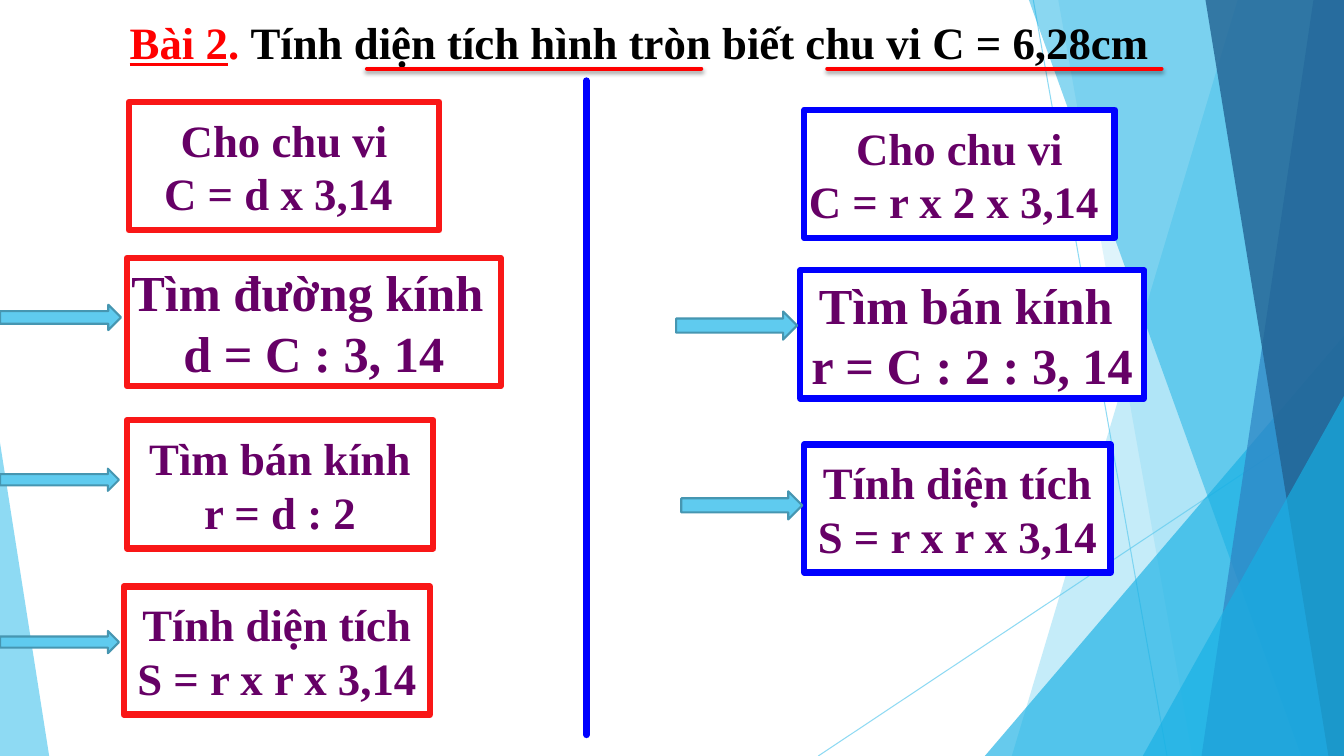
from lxml.etree import SubElement as Sub
from pptx import Presentation as Deck
from pptx.dml.color import RGBColor as Rgb
from pptx.enum.shapes import MSO_CONNECTOR as Join, MSO_SHAPE as Kind
from pptx.enum.text import MSO_ANCHOR as Anchor, PP_ALIGN as Align
from pptx.oxml.ns import qn
from pptx.util import Cm, Pt

HUES = {
    "red": "FF0000", "frame": "F91717", "blue": "0000FF", "plum": "660066",
    "black": "000000", "white": "FFFFFF", "sky": "5FCBEF", "edge": "4696B1",
    "cyan": "17B0E4", "steel": "2E83C3", "navy": "226292",
}
FONT = "Times New Roman"
WIDE, HIGH = 33.87, 19.05
BOX_H = 3.23


def hue(name):
    """Return the named colour."""
    return Rgb.from_string(HUES[name])


def fade(shape, alpha):
    """Make the colour of a shape or line partly clear."""
    clr = shape._element.spPr.find(".//" + qn("a:srgbClr"))
    Sub(clr, qn("a:alpha"), val=str(alpha * 1000))


def paint(shape, fill, edge=None, width=0):
    """Set fill and outline and drop the shadow."""
    shape.shadow.inherit = False
    shape.fill.solid()
    shape.fill.fore_color.rgb = hue(fill)
    if edge:
        shape.line.color.rgb = hue(edge)
        shape.line.width = Pt(width)
    else:
        shape.line.fill.background()


def write(para, text, size=32, color="plum", under=False):
    """Add a bold run of text to a paragraph."""
    run = para.add_run()
    run.text = text
    font = run.font
    font.name, font.size = FONT, Pt(size)
    font.bold, font.underline = True, under
    font.color.rgb = hue(color)


def rule(slide, start, end, color, width, alpha=None, shade=False):
    """Draw a straight line, faded or with a soft shadow if asked."""
    line = slide.shapes.add_connector(
        Join.STRAIGHT, *[Cm(n) for n in (*start, *end)])
    line.line.color.rgb = hue(color)
    line.line.width = Pt(width)
    if alpha:
        fade(line, alpha)
    else:
        line.line._get_or_add_ln().set("cap", "rnd")
    glow = Sub(line._element.spPr, qn("a:effectLst"))
    if shade:
        cast = Sub(glow, qn("a:outerShdw"), blurRad="38100", dist="25400",
                   dir="5400000", rotWithShape="0")
        clr = Sub(cast, qn("a:srgbClr"), val=HUES["black"])
        Sub(clr, qn("a:alpha"), val="35000")


def facet(slide, top, foot, right, color, alpha):
    """Draw a slanted band reaching to the right edge of the slide."""
    pen = slide.shapes.build_freeform(Cm(top), 0)
    spots = [(WIDE, 0), (WIDE, HIGH), (foot, HIGH)] if right else []
    pen.add_line_segments([(Cm(x), Cm(y)) for x, y in spots])
    shape = pen.convert_to_shape()
    paint(shape, color)
    fade(shape, alpha)


def peak(slide, left, top, width, tip, color, alpha):
    """Draw a triangle standing on the bottom of the slide."""
    shape = slide.shapes.add_shape(
        Kind.ISOSCELES_TRIANGLE, Cm(left), Cm(top), Cm(width), Cm(HIGH - top))
    shape.adjustments[0] = tip
    paint(shape, color)
    fade(shape, alpha)


def step(slide, left, top, width, edge, lines, size=32):
    """Draw a framed step of the solution."""
    box = slide.shapes.add_shape(
        Kind.RECTANGLE, Cm(left), Cm(top), Cm(width), Cm(BOX_H))
    paint(box, "white", edge, 4.5)
    frame = box.text_frame
    frame.word_wrap = False
    frame.vertical_anchor = Anchor.MIDDLE
    for i, text in enumerate(lines):
        para = frame.add_paragraph() if i else frame.paragraphs[0]
        para.alignment = Align.CENTER
        write(para, text, size=size)


def arrow(slide, left, top, width, height):
    """Draw a block arrow leading to a step."""
    shape = slide.shapes.add_shape(
        Kind.RIGHT_ARROW, Cm(left), Cm(top), Cm(width), Cm(height))
    paint(shape, "sky", "edge", 1.5)


def decor(slide):
    """Draw the crystal backdrop."""
    rule(slide, (26.04, 0), (29.41, HIGH), "sky", 0.75, alpha=70)
    rule(slide, (WIDE, 10.24), (20.62, HIGH), "sky", 0.75, alpha=70)
    facet(slide, 31.19, 25.5, True, "sky", 36)
    facet(slide, 26.67, 30.05, True, "sky", 20)
    peak(slide, 24.82, 8.46, 9.05, 1, "cyan", 66)
    facet(slide, 25.93, 32.79, True, "cyan", 50)
    facet(slide, 33.1, 30.28, True, "steel", 70)
    facet(slide, 30.38, 33.48, True, "navy", 80)
    peak(slide, 28.8, 9.98, 5.07, 1, "cyan", 66)
    peak(slide, 0, 11.15, 1.24, 0, "sky", 70)


def title(slide):
    """Write the task and underline its key words."""
    box = slide.shapes.add_textbox(Cm(3.02), Cm(0.25), Cm(26.26), Cm(1.63))
    box.text_frame.word_wrap = True
    para = box.text_frame.paragraphs[0]
    write(para, "Bài 2", color="red", under=True)
    write(para, ". ", color="red")
    write(para, "Tính diện tích hình tròn biết chu vi C = 6,28cm",
          color="black")
    for left in (9.25, 20.85):
        rule(slide, (left, 1.73), (left + 8.42, 1.73), "red", 3, shade=True)


def main():
    """Build the slide and save it."""
    deck = Deck()
    deck.slide_width, deck.slide_height = Cm(WIDE), Cm(HIGH)
    slide = deck.slides.add_slide(deck.slide_layouts[6])
    decor(slide)
    title(slide)
    area = ("Tính diện tích", "S = r x r x 3,14")
    steps = [
        (3.25, 2.57, 7.82, "frame", ("Cho chu vi", "C = d x 3,14 ")),
        (3.2, 6.5, 9.42, "frame", ("Tìm đường kính ", "d = C : 3, 14"), 36),
        (3.2, 10.59, 7.72, "frame", ("Tìm bán kính", "r = d : 2")),
        (3.12, 14.78, 7.72, "frame", area),
        (20.27, 2.77, 7.82, "blue", ("Cho chu vi", "C = r x 2 x 3,14 ")),
        (20.17, 6.81, 8.66, "blue", ("Tìm bán kính ", "r = C : 2 : 3, 14"), 36),
        (20.27, 11.2, 7.72, "blue", area),
    ]
    for item in steps:
        step(slide, *item)
    arrows = [
        (0, 7.68, 3.05, 0.64), (0, 11.81, 3, 0.56), (0, 15.9, 3, 0.56),
        (17.04, 7.85, 3.05, 0.71), (17.17, 12.38, 3.05, 0.71),
    ]
    for item in arrows:
        arrow(slide, *item)
    rule(slide, (14.78, 2.03), (14.78, 18.52), "blue", 4.5)
    deck.save("out.pptx")


if __name__ == "__main__":
    main()
